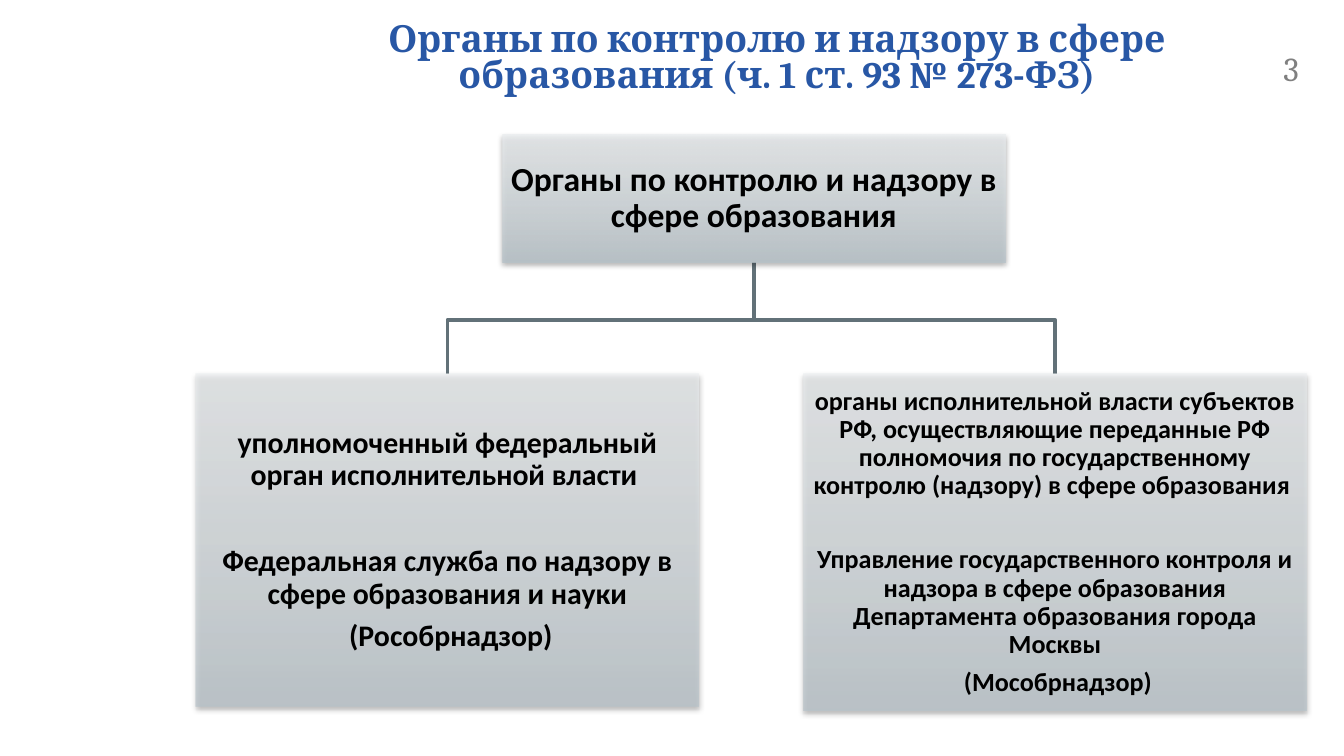
from lxml.etree import SubElement
from pptx import Presentation
from pptx.dml.color import RGBColor
from pptx.enum.shapes import MSO_SHAPE
from pptx.enum.text import MSO_ANCHOR, MSO_AUTO_SIZE, PP_ALIGN
from pptx.oxml.ns import qn
from pptx.util import Inches, Pt

COLORS = {
    "title": "2857A5",
    "number": "808080",
    "text": "000000",
    "line": "627178",
    "shadow": "000000",
    "low": "B8C3CA",
    "middle": "CDD5D9",
    "high": "ECEFF1",
}
TITLE = "Органы по контролю и надзору в сфере образования (ч. 1 ст. 93 № 273-ФЗ)"
PAGE_NUMBER = "3"
ROOT = {
    "paragraphs": ["Органы по контролю и надзору в сфере образования"],
    "size": 18, "left": 3.74, "height": 0.95, "opacity": 80, "gaps": [0],
}
BRANCHES = [
    {
        "paragraphs": [
            "уполномоченный федеральный орган исполнительной власти ",
            "Федеральная служба по надзору в сфере образования и науки",
            " (Рособрнадзор)",
        ],
        "size": 16, "left": 1.46, "height": 2.48, "opacity": 70, "gaps": [29, 5.5, 0],
    },
    {
        "paragraphs": [
            "органы исполнительной власти субъектов РФ, осуществляющие переданные РФ "
            "полномочия по государственному контролю (надзору) в сфере образования ",
            "Управление государственного контроля и надзора в сфере образования "
            "Департамента образования города Москвы",
            " (Мособрнадзор)",
        ],
        "size": 14, "left": 5.98, "height": 2.51, "opacity": 70, "gaps": [24.5, 5, 0],
    },
]
SLIDE_WIDTH = 10
SLIDE_HEIGHT = SLIDE_WIDTH * 9 / 16
BOX_WIDTH = 3.74
ROOT_TOP, ELBOW, BRANCH_TOP = 1, 2.38, 2.78
GRADIENT = [(0, "low"), (35, "middle"), (100, "high")]


def write(frame, paragraphs, *, size, font, color, bold=False, align=PP_ALIGN.LEFT,
          spacing=1.0, gaps=(0,), anchor=MSO_ANCHOR.TOP, inset=None):
    frame.word_wrap = True
    frame.auto_size = MSO_AUTO_SIZE.NONE
    frame.vertical_anchor = anchor
    if inset is not None:
        frame.margin_left = frame.margin_right = Inches(inset)
        frame.margin_top = frame.margin_bottom = Inches(inset)
    for index, text in enumerate(paragraphs):
        para = frame.paragraphs[0] if index == 0 else frame.add_paragraph()
        para.alignment = align
        para.line_spacing = spacing
        para.space_before = Pt(0)
        para.space_after = Pt(gaps[index])
        span = para.add_run()
        span.text = text
        span.font.size = Pt(size)
        span.font.name = font
        span.font.bold = bold
        span.font.color.rgb = RGBColor.from_string(COLORS[color])


def add_color(parent, color, opacity):
    node = SubElement(parent, qn("a:srgbClr"), val=COLORS[color])
    SubElement(node, qn("a:alpha"), val=str(opacity * 1000))


def add_gradient_and_shadow(box, opacity):
    box.line.fill.background()
    properties = box._element.spPr
    gradient = SubElement(properties, qn("a:gradFill"), rotWithShape="1")
    stops = SubElement(gradient, qn("a:gsLst"))
    for position, color in GRADIENT:
        add_color(SubElement(stops, qn("a:gs"), pos=str(position * 1000)), color, opacity)
    SubElement(gradient, qn("a:lin"), ang=str(270 * 60000), scaled="0")
    properties.find(qn("a:ln")).addprevious(gradient)
    effects = SubElement(properties, qn("a:effectLst"))
    shadow = SubElement(effects, qn("a:outerShdw"), blurRad=str(Pt(3.1)), dist=str(Pt(1.6)),
                        dir=str(90 * 60000), rotWithShape="0")
    add_color(shadow, "shadow", 38)


def add_box(page, node, top):
    area = [Inches(value) for value in (node["left"], top, BOX_WIDTH, node["height"])]
    box = page.shapes.add_shape(MSO_SHAPE.RECTANGLE, *area)
    add_gradient_and_shadow(box, node["opacity"])
    label = page.shapes.add_textbox(*area)
    write(label.text_frame, node["paragraphs"], size=node["size"], font="Calibri", color="text",
          bold=True, align=PP_ALIGN.CENTER, spacing=0.9, gaps=node["gaps"],
          anchor=MSO_ANCHOR.MIDDLE, inset=0.02)


def add_branch_line(page, branch):
    start = ROOT["left"] + BOX_WIDTH / 2
    end = branch["left"] + BOX_WIDTH / 2
    points = [(start, ROOT_TOP + ROOT["height"]), (start, ELBOW), (end, ELBOW), (end, BRANCH_TOP)]
    points = [(Inches(x), Inches(y)) for x, y in points]
    builder = page.shapes.build_freeform(*points[0])
    builder.add_line_segments(points[1:], close=False)
    line = builder.convert_to_shape()
    line.shadow.inherit = False
    line.fill.background()
    line.line.color.rgb = RGBColor.from_string(COLORS["line"])
    line.line.width = Pt(2)


def main():
    deck = Presentation()
    deck.slide_width, deck.slide_height = Inches(SLIDE_WIDTH), Inches(SLIDE_HEIGHT)
    page = deck.slides.add_slide(deck.slide_layouts[5])

    title = page.shapes.title
    title.left, title.top = Inches(2.62), Inches(0.13)
    title.width, title.height = Inches(6.32), Inches(0.63)
    write(title.text_frame, [TITLE], size=20, font="Cambria", color="title", bold=True,
          align=PP_ALIGN.CENTER, spacing=0.8, anchor=MSO_ANCHOR.MIDDLE)

    number = page.shapes.add_textbox(Inches(9.45), Inches(0.31), Inches(0.55), Inches(0.3))
    write(number.text_frame, [PAGE_NUMBER], size=18, font="Cambria", color="number")

    for branch in reversed(BRANCHES):
        add_branch_line(page, branch)
    add_box(page, ROOT, ROOT_TOP)
    for branch in BRANCHES:
        add_box(page, branch, BRANCH_TOP)

    deck.save("out.pptx")


if __name__ == "__main__":
    main()
